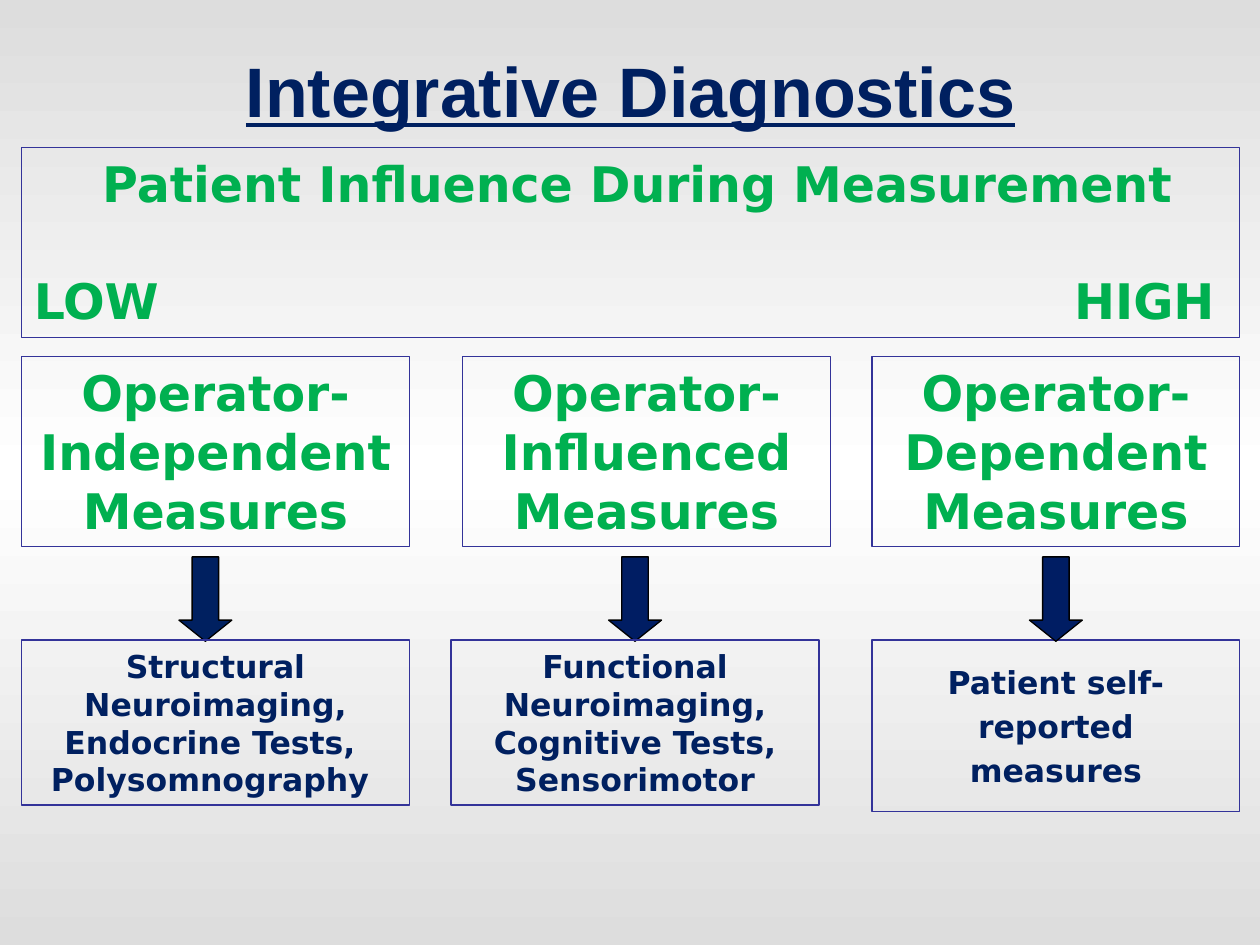
from copy import deepcopy

from pptx import Presentation
from pptx.dml.color import RGBColor
from pptx.enum.shapes import MSO_SHAPE as Shape
from pptx.enum.text import MSO_ANCHOR as Anchor, MSO_AUTO_SIZE as Fit, PP_ALIGN as Align
from pptx.oxml.ns import qn
from pptx.util import Inches, Pt
from lxml.etree import SubElement

NAVY = RGBColor(0x00, 0x20, 0x60)
DEEP = RGBColor(0x00, 0x1D, 0x63)
GREEN = RGBColor(0x00, 0xB0, 0x50)
EDGE = RGBColor(0x33, 0x33, 0x99)
BLACK = RGBColor(0, 0, 0)
GREY = RGBColor(0xDD, 0xDD, 0xDD)
WHITE = RGBColor(0xFF, 0xFF, 0xFF)

LEFT, WIDE = 0.17, 9.67
HEAD = {"size": 28, "color": GREEN}

# head box left, width, head lines, arrow left and fill, detail left, detail lines
COLUMNS = [
    (0.17, 3.08, ["Operator-", "Independent", "Measures"], 1.42, NAVY, 0.17,
     ["Structural Neuroimaging, Endocrine Tests, ", "Polysomnography "]),
    (3.67, 2.92, ["Operator-", "Influenced", "Measures"], 4.83, DEEP, 3.58,
     ["Functional Neuroimaging,", "Cognitive Tests,", "Sensorimotor"]),
    (6.92, 2.92, ["Operator-", "Dependent", "Measures"], 8.17, DEEP, 6.92,
     ["Patient self-", "reported", "measures"]),
]


def place(item, box):
    item.left, item.top, item.width, item.height = map(Inches, box)


def write(item, lines, size=18, color=NAVY, face="DejaVu Sans", under=None,
          align=Align.CENTER, anchor=Anchor.TOP, gap=0, fit=Fit.SHAPE_TO_FIT_TEXT):
    frame = item.text_frame
    frame.text = "\n".join(lines)
    frame.word_wrap = True
    frame.auto_size = fit
    frame.vertical_anchor = anchor
    for i, para in enumerate(frame.paragraphs):
        para.alignment = align
        para.space_before = Pt(gap if i else 0)
        for run in para.runs:
            font = run.font
            font.name, font.size, font.bold = face, Pt(size), True
            font.underline = under
            font.color.rgb = color
    return frame.paragraphs


def outline(item, color):
    item.line.color.rgb = color
    item.line.width = Pt(0.75)


def add_box(slide, box, kind=Shape.RECTANGLE, fill=None, edge=EDGE):
    item = slide.shapes.add_shape(kind, *map(Inches, box))
    item.shadow.inherit = False
    if fill is None:
        item.fill.background()
    else:
        item.fill.solid()
        item.fill.fore_color.rgb = fill
    outline(item, edge)
    return item


def paint_back(slide):
    fill = slide.background.fill
    fill.gradient()
    fill.gradient_angle = 90
    stops = slide.element.find(".//" + qn("a:gsLst"))
    stops.append(deepcopy(stops[0]))
    for stop, spot, color in zip(fill.gradient_stops, (0, 0.5, 1), (GREY, WHITE, GREY)):
        stop.position = spot
        stop.color.rgb = color


def add_title(slide, box):
    title = slide.shapes.title
    place(title, box)
    write(title, ["Integrative Diagnostics"], size=40, face="Arial", under=True,
          anchor=Anchor.MIDDLE, fit=Fit.NONE)


def add_scale(slide, box):
    """Banner with its heading above the two ends of the scale."""
    lines = ["Patient Influence During Measurement", "LOW\tHIGH"]
    head, ends = write(add_box(slide, box), lines, gap=33, align=Align.LEFT, **HEAD)
    head.alignment = Align.CENTER
    head._p.get_or_add_pPr().set("marL", str(Inches(0.1)))
    tabs = SubElement(ends._p.get_or_add_pPr(), qn("a:tabLst"))
    SubElement(tabs, qn("a:tab"), pos=str(Inches(box[2] - 0.3)), algn="r")


def add_arrow(slide, box, fill):
    arrow = add_box(slide, box, Shape.DOWN_ARROW, fill, BLACK)
    arrow.adjustments[0] = 0.5
    arrow.adjustments[1] = 0.4


def add_body(slide, box, lines):
    body = slide.placeholders[1]
    place(body, box)
    outline(body, EDGE)
    for para in write(body, lines, anchor=Anchor.MIDDLE, gap=3.6, fit=Fit.NONE):
        props = para._p.get_or_add_pPr()
        props.set("marL", "0")
        props.set("indent", "0")
        SubElement(props, qn("a:buNone"))


def add_column(slide, top, column, last):
    left, width, head, tip, fill, base, lines = column
    write(add_box(slide, (left, top, width, 1.51)), head, **HEAD)
    add_arrow(slide, (tip, top + 1.59, 0.42, 0.67), fill)
    low = top + 2.25
    if last:
        add_body(slide, (base, low, width, 1.36), lines)
    else:
        write(add_box(slide, (base, low, width, 1.31)), lines, anchor=Anchor.MIDDLE)


def main():
    deck = Presentation()
    deck.slide_width, deck.slide_height = Inches(10), Inches(7.5)
    slide = deck.slides.add_slide(deck.slide_layouts[1])
    paint_back(slide)
    add_title(slide, (LEFT, 0.17, WIDE, 1.08))
    add_scale(slide, (LEFT, 1.17, WIDE, 1.51))
    for column in COLUMNS:
        add_column(slide, 2.83, column, column is COLUMNS[-1])
    deck.save("out.pptx")


if __name__ == "__main__":
    main()
